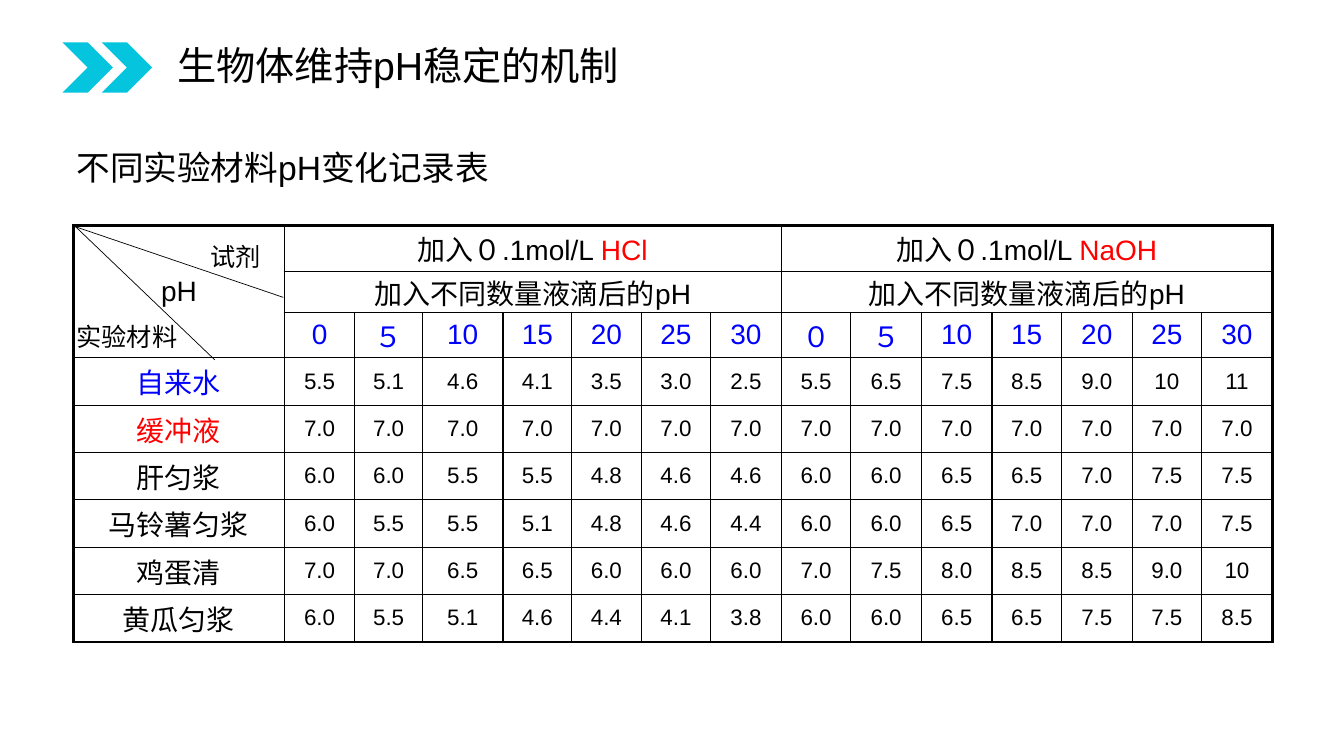
import pptx
import pptx.util
import pptx.dml.color
import pptx.enum.shapes
import pptx.enum.text
import pptx.oxml
import pptx.oxml.ns

Inches = pptx.util.Inches
Pt = pptx.util.Pt
RGBColor = pptx.dml.color.RGBColor
ALIGN = pptx.enum.text.PP_ALIGN
ANCHOR = pptx.enum.text.MSO_ANCHOR

BLACK = RGBColor(0, 0, 0)
RED = RGBColor(0xFF, 0, 0)
BLUE = RGBColor(0, 0, 0xFF)
CYAN = RGBColor(0x04, 0xC4, 0xDE)
FONT = "Arial"

COLUMN_WIDTHS = [2.09, 0.7, 0.67, 0.8, 0.68, 0.69, 0.69, 0.7,
                 0.69, 0.7, 0.7, 0.69, 0.7, 0.69, 0.7]
ROW_HEIGHTS = [0.45, 0.41, 0.45] + [0.47] * 6
HCL_COLUMN, NAOH_COLUMN = 1, 8
REAGENTS = {HCL_COLUMN: "HCl", NAOH_COLUMN: "NaOH"}
DROPS = "0 ５ 10 15 20 25 30 ０ ５ 10 15 20 25 30"
MATERIALS = [
    ("自来水", BLUE, "5.5 5.1 4.6 4.1 3.5 3.0 2.5 5.5 6.5 7.5 8.5 9.0 10 11"),
    ("缓冲液", RED, "7.0 7.0 7.0 7.0 7.0 7.0 7.0 7.0 7.0 7.0 7.0 7.0 7.0 7.0"),
    ("肝匀浆", BLACK, "6.0 6.0 5.5 5.5 4.8 4.6 4.6 6.0 6.0 6.5 6.5 7.0 7.5 7.5"),
    ("马铃薯匀浆", BLACK, "6.0 5.5 5.5 5.1 4.8 4.6 4.4 6.0 6.0 6.5 7.0 7.0 7.0 7.5"),
    ("鸡蛋清", BLACK, "7.0 7.0 6.5 6.5 6.0 6.0 6.0 7.0 7.5 8.0 8.5 8.5 9.0 10"),
    ("黄瓜匀浆", BLACK, "6.0 5.5 5.1 4.6 4.4 4.1 3.8 6.0 6.0 6.5 6.5 7.5 7.5 8.5"),
]


def add_run(paragraph, text, size, color=BLACK):
    run = paragraph.add_run()
    run.text = text
    run.font.size = Pt(size)
    run.font.name = FONT
    run.font.color.rgb = color


def add_title(slide, text):
    title = slide.shapes.title
    title.left, title.top = Inches(1.66), Inches(0.44)
    title.width, title.height = Inches(5.59), Inches(0.46)
    frame = title.text_frame
    frame.auto_size = pptx.enum.text.MSO_AUTO_SIZE.NONE
    frame.vertical_anchor = ANCHOR.MIDDLE
    paragraph = frame.paragraphs[0]
    paragraph.alignment = ALIGN.LEFT
    paragraph.line_spacing = 0.9
    add_run(paragraph, text, 28)


def add_chevron(slide, left):
    chevron = slide.shapes.add_shape(pptx.enum.shapes.MSO_SHAPE.CHEVRON, Inches(left),
                                     Inches(0.42), Inches(0.5), Inches(0.5))
    chevron.shadow.inherit = False
    chevron.fill.solid()
    chevron.fill.fore_color.rgb = CYAN
    chevron.line.fill.background()


def add_label(slide, left, top, width, height, text, size, alignment=ALIGN.LEFT):
    label = slide.shapes.add_textbox(Inches(left), Inches(top), Inches(width), Inches(height))
    label.text_frame.word_wrap = True
    paragraph = label.text_frame.paragraphs[0]
    paragraph.alignment = alignment
    add_run(paragraph, text, size)


def add_diagonal(slide, x1, y1, x2, y2):
    diagonal = slide.shapes.add_connector(pptx.enum.shapes.MSO_CONNECTOR.STRAIGHT,
                                          Inches(x1), Inches(y1), Inches(x2), Inches(y2))
    diagonal.line.color.rgb = BLACK
    diagonal.line.width = Pt(0.5)
    properties = diagonal.element.spPr
    properties.append(properties.makeelement(pptx.oxml.ns.qn("a:effectLst"), {}))


def write_cell(cell, *runs):
    paragraph = cell.text_frame.paragraphs[0]
    paragraph.alignment = ALIGN.CENTER
    for run in runs:
        add_run(paragraph, *run)


def format_cell(cell, row, column):
    cell.vertical_anchor = ANCHOR.MIDDLE
    cell.margin_left = cell.margin_right = Inches(0.13)
    cell.margin_top = cell.margin_bottom = 0
    # Thick lines go only on the outside of the table
    outer = {
        "lnL": column == 0,
        "lnR": column + cell.span_width == len(COLUMN_WIDTHS),
        "lnT": row == 0,
        "lnB": row + cell.span_height == len(ROW_HEIGHTS),
    }
    properties = cell._tc.get_or_add_tcPr()
    for edge, thick in outer.items():
        width = Pt(2.25 if thick else 1)
        properties.append(pptx.oxml.parse_xml(
            f'<a:{edge} {pptx.oxml.ns.nsdecls("a")} w="{width}"><a:solidFill>'
            f'<a:srgbClr val="{BLACK}"/></a:solidFill></a:{edge}>'))
    cell.fill.background()


def add_ph_table(slide):
    frame = slide.shapes.add_table(len(ROW_HEIGHTS), len(COLUMN_WIDTHS), Inches(0.73),
                                   Inches(2.24), Inches(11.88), Inches(4.13))
    table = frame.table
    table.first_row = table.horz_banding = False
    for column, width in zip(table.columns, COLUMN_WIDTHS):
        column.width = Inches(width)
    for row, height in zip(table.rows, ROW_HEIGHTS):
        row.height = Inches(height)

    # Merged headings
    table.cell(0, 0).merge(table.cell(2, 0))
    write_cell(table.cell(0, 0), ("pH", 20))
    for start, reagent in REAGENTS.items():
        for row in (0, 1):
            table.cell(row, start).merge(table.cell(row, start + 6))
        write_cell(table.cell(0, start), ("加入０.1mol/L ", 20), (reagent, 20, RED))
        write_cell(table.cell(1, start), ("加入不同数量液滴后的pH", 20))

    # Drop counts and readings
    for column, drops in enumerate(DROPS.split(), 1):
        write_cell(table.cell(2, column), (drops, 20, BLUE))
    for row, (material, color, readings) in enumerate(MATERIALS, 3):
        write_cell(table.cell(row, 0), (material, 20, color))
        for column, reading in enumerate(readings.split(), 1):
            write_cell(table.cell(row, column), (reading, 16))

    for row in range(len(ROW_HEIGHTS)):
        for column in range(len(COLUMN_WIDTHS)):
            format_cell(table.cell(row, column), row, column)


def main():
    deck = pptx.Presentation()
    deck.slide_width, deck.slide_height = Inches(13.33), Inches(7.5)
    slide = deck.slides.add_slide(deck.slide_layouts[5])

    # Heading
    for left in (0.62, 1.01):
        add_chevron(slide, left)
    add_title(slide, "生物体维持pH稳定的机制")

    # Record table with its caption
    add_ph_table(slide)
    add_label(slide, 0.13, 1.41, 5.35, 0.5, "不同实验材料pH变化记录表", 24, ALIGN.CENTER)

    # Divided corner cell
    add_diagonal(slide, 0.72, 2.24, 2.81, 2.95)
    add_diagonal(slide, 0.74, 2.24, 2.13, 3.57)
    add_label(slide, 0.66, 3.14, 2.41, 0.4, "实验材料", 18)
    add_label(slide, 1.99, 2.34, 1.09, 0.4, "试剂", 18)

    deck.save("out.pptx")


if __name__ == "__main__":
    main()
